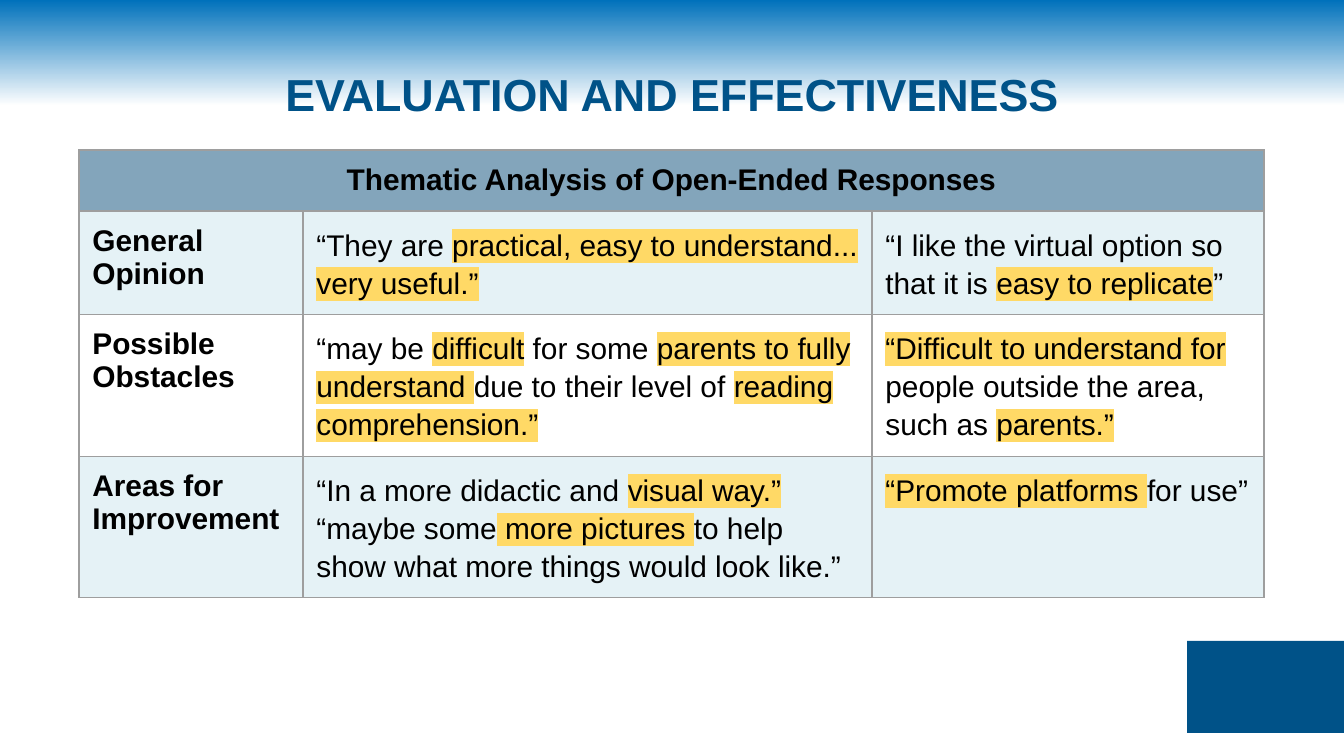
import lxml.etree
import pptx
import pptx.dml.color
import pptx.enum.shapes
import pptx.enum.text
import pptx.oxml.ns
import pptx.util

PX = 914400 / 134.4
COLORS = {
    "sky": "0071BB",
    "white": "FFFFFF",
    "navy": "005288",
    "header": "83A5BB",
    "band": "E5F2F6",
    "border": "9E9E9E",
    "highlight": "FFD966",
    "black": "000000",
}
COLUMN_WIDTHS = [224, 569, 392]
ROW_HEIGHTS = [61, 103, 142, 141]
HEADING = "Thematic Analysis of Open-Ended Responses"
# Text between bars is highlighted; each line break starts a new paragraph.
RESPONSES = [
    ["General Opinion",
     "“They are |practical, easy to understand... very useful.”|",
     "“I like the virtual option so that it is |easy to replicate|”"],
    ["Possible Obstacles",
     "“may be |difficult| for some |parents to fully understand |"
     "due to their level of |reading comprehension.”|",
     "|“Difficult to understand for |people outside the area, such as |parents.”|"],
    ["Areas for Improvement",
     "“In a more didactic and |visual way.”|\n"
     "“maybe some| more pictures |to help show what more things would look like.”",
     "|“Promote platforms |for use”"],
]


def px(length):
    return pptx.util.Emu(round(length * PX))


def add_color(parent, tag, color):
    """Append a DrawingML element that holds one RGB colour."""
    element = lxml.etree.SubElement(parent, pptx.oxml.ns.qn(tag))
    lxml.etree.SubElement(element, pptx.oxml.ns.qn("a:srgbClr"), val=COLORS[color])


rgb = {name: pptx.dml.color.RGBColor.from_string(value) for name, value in COLORS.items()}
presentation = pptx.Presentation()
presentation.slide_width, presentation.slide_height = px(1344), px(756)
slide = presentation.slides.add_slide(presentation.slide_layouts[5])

# Background
background = slide.background.fill
background.gradient()
background.gradient_angle = 270
for stop, color, position in zip(background.gradient_stops, ["sky", "white"], [0, 0.14]):
    stop.color.rgb = rgb[color]
    stop.position = position

corner = slide.shapes.add_shape(
    pptx.enum.shapes.MSO_SHAPE.RECTANGLE, px(1187), px(641), px(157), px(92))
corner.shadow.inherit = False
corner.fill.solid()
corner.fill.fore_color.rgb = rgb["navy"]
corner.line.fill.background()

# Title
title = slide.shapes.title
title.left, title.top, title.width, title.height = px(67), px(31), px(1210), px(126)
title.text_frame.text = "EVALUATION AND EFFECTIVENESS"
title.text_frame.vertical_anchor = pptx.enum.text.MSO_ANCHOR.MIDDLE
paragraph = title.text_frame.paragraphs[0]
paragraph.alignment = pptx.enum.text.PP_ALIGN.CENTER
font = paragraph.runs[0].font
font.name, font.size, font.bold = "Arial", pptx.util.Pt(24), True
font.color.rgb = rgb["navy"]

# Table
table = slide.shapes.add_table(
    len(ROW_HEIGHTS), len(COLUMN_WIDTHS), px(79), px(150),
    px(sum(COLUMN_WIDTHS)), px(sum(ROW_HEIGHTS))).table
table.horz_banding = False
for column, width in zip(table.columns, COLUMN_WIDTHS):
    column.width = px(width)
for row, height in zip(table.rows, ROW_HEIGHTS):
    row.height = px(height)
table.cell(0, 0).merge(table.cell(0, 2))

for row_index, texts in enumerate([[HEADING, "", ""]] + RESPONSES):
    for column_index, text in enumerate(texts):
        cell = table.cell(row_index, column_index)
        cell.margin_left = cell.margin_right = pptx.util.Inches(0.1)
        cell.margin_top = cell.margin_bottom = pptx.util.Inches(0.1)

        properties = cell._tc.get_or_add_tcPr()
        for side in ["a:lnL", "a:lnR", "a:lnT", "a:lnB"]:
            line = lxml.etree.SubElement(
                properties, pptx.oxml.ns.qn(side), w=str(pptx.util.Pt(0.75)))
            add_color(line, "a:solidFill", "border")
        if row_index == 2:
            cell.fill.background()
        else:
            cell.fill.solid()
            cell.fill.fore_color.rgb = rgb["band" if row_index else "header"]

        if cell.is_spanned:
            continue
        is_label = column_index == 0
        cell.text_frame.text = text.replace("|", "")
        for paragraph, marked_text in zip(cell.text_frame.paragraphs, text.split("\n")):
            if row_index == 0:
                paragraph.alignment = pptx.enum.text.PP_ALIGN.CENTER
            if not is_label:
                paragraph.line_spacing = 1.15
            paragraph.clear()
            for part_index, part in enumerate(marked_text.split("|")):
                if not part:
                    continue
                run = paragraph.add_run()
                run.text = part
                run.font.size, run.font.bold = pptx.util.Pt(16), is_label
                run.font.color.rgb = rgb["black"]
                if part_index % 2:
                    add_color(run.font._element, "a:highlight", "highlight")
                run.font.name = "Arial"

presentation.save("out.pptx")
